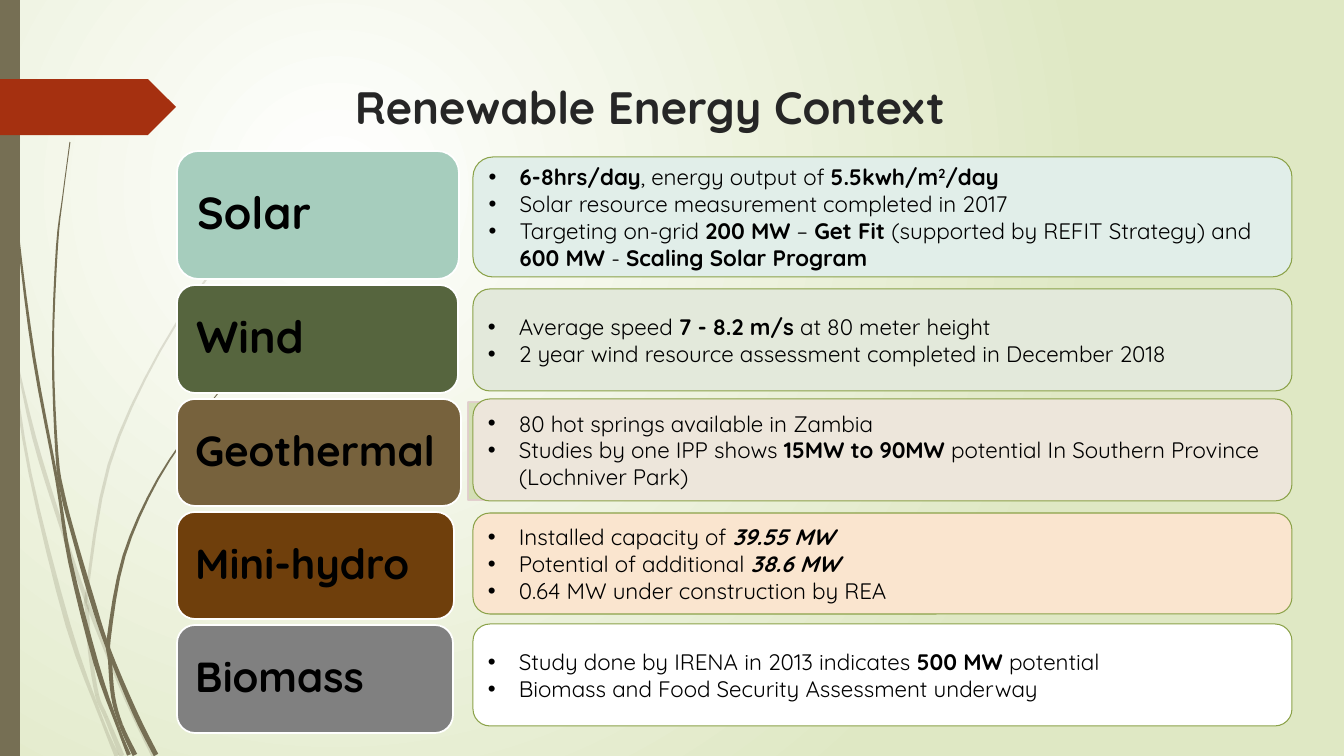
import math
from dataclasses import dataclass
from lxml import etree
from pptx import Presentation
from pptx import util as u
from pptx.dml import color
from pptx.enum import shapes, text
from pptx.oxml import ns

PX = 914400 / 100.8
STEPS = 4


@dataclass(frozen=True)
class Theme:
    font: str = "Quicksand"
    ink: str = "000000"
    heading: str = "262626"
    paper: str = "FFFFFF"
    meadow: str = "DFE8C4"
    grass: str = "766F54"
    tag: str = "A53010"
    panel_edge: str = "8BA249"
    backing: str = "D1DDB0"
    backing_edge: str = "E1CDCC"
    title_size: float = 32.4
    body_size: int = 16


THEME = Theme()
BOLD = {"bold": True}
STRONG = {"bold": True, "italic": True}

ROWS = [
    ("Solar", 32, "A6CDBD", (151, 282, 128), "E1EEE9", (157, 120), [
        [("6-8hrs/day", BOLD), (", energy output of ", {}), ("5.5kwh/m", BOLD),
         ("2", {"bold": True, "raised": 30000}), ("/day", BOLD)],
        [("Solar resource measurement completed in 2017", {})],
        [("Targeting on-grid ", {}), ("200 MW ", BOLD), ("– ", {}), ("Get Fit ", BOLD),
         ("(supported by REFIT Strategy) and ", {}), ("600 MW ", BOLD), ("- ", {}),
         ("Scaling Solar Program", BOLD)]]),
    ("Wind", 32, "56653E", (285, 281, 108), "E3E9DB", (289, 102), [
        [("Average speed ", {}), ("7 - 8.2 m/s ", BOLD), ("at 80 meter height", {})],
        [("2 year wind resource assessment completed in December 2018", {})]]),
    ("Geothermal", 30, "77623D", (399, 284, 107), "EDE6DB", (399, 102), [
        [("80 hot springs available in Zambia", {})],
        [("Studies by one IPP shows ", {}), ("15MW to 90MW ", BOLD),
         ("potential In Southern Province (Lochniver Park)", {})]]),
    ("Mini-hydro", 30, "6F3F0C", (512, 277, 107), "FAE5CF", (513, 101), [
        [("Installed capacity of ", {}), ("39.55 MW", STRONG)],
        [("Potential of additional ", {}), ("38.6 MW", STRONG)],
        [("0.64 MW under construction by REA", {})]]),
    ("Biomass", 30, "808080", (625, 276, 108), "FFFFFF", (624, 102), [
        [("Study done by IRENA in 2013 indicates", {}), (" 500 MW ", BOLD), ("potential", {})],
        [("Biomass and Food Security Assessment underway", {})]]),
]

PALE_BLADES = [
    ([(0, 293, 4), (11, 353, 3), (30, 473, 3), (68, 625, 5), (102, 720, 3), (117, 756, 5)],
     (1, 4)),
    ([(14, 348, 1), (34, 437, 4), (61, 525, 4), (87, 602, 4), (126, 698, 4), (154, 756, 5)],
     (3,)),
    ([(314, 154, 1), (270, 199, 1), (230, 246, 2), (160, 351, 2), (109, 465, 3), (87, 591, 3),
      (87, 609, 4), (90, 651, 4), (97, 695, 4), (106, 717, 4), (122, 756, 5)], (5, 6, 8, 9)),
]
DARK_BLADES = [
    ([(3, 0, 1), (7, 110, 1), (18, 234, 2), (34, 358, 3), (57, 481, 3), (70, 561, 4),
      (96, 663, 5), (118, 727, 3), (129, 755, 4)], (4, 7)),
    ([(70, 142, 1), (63, 195, 1), (57, 247, 2), (53, 352, 2), (57, 455, 3), (63, 495, 4),
      (74, 537, 4), (91, 596, 5), (108, 648, 4), (135, 713, 5), (156, 755, 5)], (4, 5, 8)),
    ([(262, 347, 1), (233, 376, 1), (206, 409, 1), (158, 479, 2), (124, 556, 3), (109, 637, 4),
      (110, 660, 4), (113, 696, 4), (121, 725, 4), (135, 755, 5)], (5, 6, 7, 8)),
]


def px(value):
    return u.Emu(round(value * PX))


def rgb(code):
    return color.RGBColor.from_string(code)


def apply(target, values):
    for name, value in values.items():
        setattr(target, name, value)


def child(parent, tag, **attributes):
    return etree.SubElement(parent, ns.qn(tag), attributes)


def paint(shape, fill, edge=None, width=1.25, opacity=None):
    shape.shadow.inherit = False
    shape.fill.solid()
    shape.fill.fore_color.rgb = rgb(fill)
    if edge:
        shape.line.color.rgb = rgb(edge)
        shape.line.width = u.Pt(width)
    else:
        shape.line.fill.background()
    if opacity:
        for tone in shape._element.spPr.iter(ns.qn("a:srgbClr")):
            child(tone, "a:alpha", val=str(opacity * 1000))


def add_block(page, kind, box, fill, **look):
    block = page.shapes.add_shape(kind, *map(px, box))
    paint(block, fill, **look)
    return block


def write(para, words, size, ink=THEME.ink, bold=False, italic=False, raised=None):
    span = para.add_run()
    span.text = words
    apply(span.font, {"name": THEME.font, "size": u.Pt(size), "bold": bold, "italic": italic})
    span.font.color.rgb = rgb(ink)
    if raised:
        span.font._element.set("baseline", str(raised))


def smooth(knots):
    padded = [knots[0], *knots, knots[-1]]
    for a, b, c, d in zip(padded, padded[1:], padded[2:], padded[3:]):
        for step in range(STEPS):
            t = step / STEPS
            yield tuple(q + t * (r - p) / 2 + t * t * (2 * p - 5 * q + 4 * r - s) / 2
                        + t ** 3 * (3 * q - p - 3 * r + s) / 2
                        for p, q, r, s in zip(a, b, c, d))
    yield knots[-1]


def draw_blade(page, knots, joints, opacity=None):
    stem = list(smooth(knots))
    left, right = [], []
    for index, (x, y, width) in enumerate(stem):
        before, after = stem[max(index - 1, 0)], stem[min(index + 1, len(stem) - 1)]
        dx, dy = after[0] - before[0], after[1] - before[1]
        reach = width / 2 / math.hypot(dx, dy)
        left.append((px(x - dy * reach), px(y + dx * reach)))
        right.append((px(x + dy * reach), px(y - dx * reach)))
    cuts = [0, *joints, len(knots) - 1]
    for first, last in zip(cuts, cuts[1:]):
        part = slice(first * STEPS, last * STEPS + 1)
        outline = left[part] + right[part][::-1]
        builder = page.shapes.build_freeform(*outline[0], scale=1.0)
        builder.add_line_segments(outline[1:], close=True)
        paint(builder.convert_to_shape(), THEME.grass, opacity=opacity)


def draw_backdrop(page, box):
    left, top, width, height = box
    fill = page.background.fill
    fill.gradient()
    for stop, tone in zip(fill.gradient_stops, (THEME.paper, THEME.meadow)):
        stop.color.rgb = rgb(tone)
    gradient = page._element.find(".//" + ns.qn("a:gradFill"))
    gradient.remove(gradient.find(ns.qn("a:lin")))
    glow = child(gradient, "a:path", path="circle")
    child(glow, "a:fillToRect", l="50000", t="50000", r="100000", b="100000")
    for blades, opacity in ((PALE_BLADES, 20), (DARK_BLADES, None)):
        for knots, joints in blades:
            draw_blade(page, knots, joints, opacity)
    add_block(page, shapes.MSO_SHAPE.RECTANGLE, (left, top, 20, height), THEME.grass)
    add_block(page, shapes.MSO_SHAPE.PENTAGON, (left, top + 79, 176, 56), THEME.tag)


def draw_title(page, box):
    title = page.shapes.title
    apply(title, dict(zip(("left", "top", "width", "height"), map(px, box))))
    apply(title.text_frame, {"vertical_anchor": text.MSO_ANCHOR.TOP, "word_wrap": True,
                             "auto_size": text.MSO_AUTO_SIZE.NONE})
    para = title.text_frame.paragraphs[0]
    para.alignment = text.PP_ALIGN.CENTER
    write(para, "Renewable Energy Context", THEME.title_size, THEME.heading, bold=True)


def draw_card(page, box, label, size, fill):
    card = add_block(page, shapes.MSO_SHAPE.ROUNDED_RECTANGLE, box, fill, edge=THEME.paper)
    apply(card.text_frame, {"vertical_anchor": text.MSO_ANCHOR.MIDDLE, "word_wrap": True,
                            "margin_left": px(round(size * 0.43)), "margin_right": px(0)})
    para = card.text_frame.paragraphs[0]
    apply(para, {"alignment": text.PP_ALIGN.LEFT, "line_spacing": 0.9})
    write(para, label, size, bold=True)


def draw_panel(page, box, fill, bullets):
    panel = add_block(page, shapes.MSO_SHAPE.ROUNDED_RECTANGLE, box, fill,
                      edge=THEME.panel_edge, width=0.75)
    frame = panel.text_frame
    apply(frame, {"vertical_anchor": text.MSO_ANCHOR.MIDDLE, "word_wrap": True})
    for index, spans in enumerate(bullets):
        para = frame.add_paragraph() if index else frame.paragraphs[0]
        para.alignment = text.PP_ALIGN.LEFT
        layout = para._p.get_or_add_pPr()
        layout.set("marL", str(px(31)))
        layout.set("indent", str(-px(31)))
        child(layout, "a:buFont", typeface="Arial")
        child(layout, "a:buChar", char="•")
        for words, style in spans:
            write(para, words, THEME.body_size, **style)


def draw_sources(page, box):
    left, top, width, height = box
    backing = add_block(page, shapes.MSO_SHAPE.ROUND_2_SAME_RECTANGLE,
                        (left + 620, top - 79, 98, 756), THEME.backing,
                        edge=THEME.backing_edge, opacity=90)
    backing.rotation = 90
    for label, size, tint, card, pale, panel, bullets in ROWS:
        draw_card(page, (left, *card), label, size, tint)
        draw_panel(page, (left + 296, panel[0], width - 296, panel[1]), pale, bullets)


def main():
    deck = Presentation()
    apply(deck, {"slide_width": px(1344), "slide_height": px(756)})
    page = deck.slides.add_slide(deck.slide_layouts[5])
    draw_backdrop(page, (0, 0, 1344, 756))
    draw_title(page, (167, 74, 966, 108))
    draw_sources(page, (177, 152, 1115, 581))
    deck.save("out.pptx")


if __name__ == "__main__":
    main()
